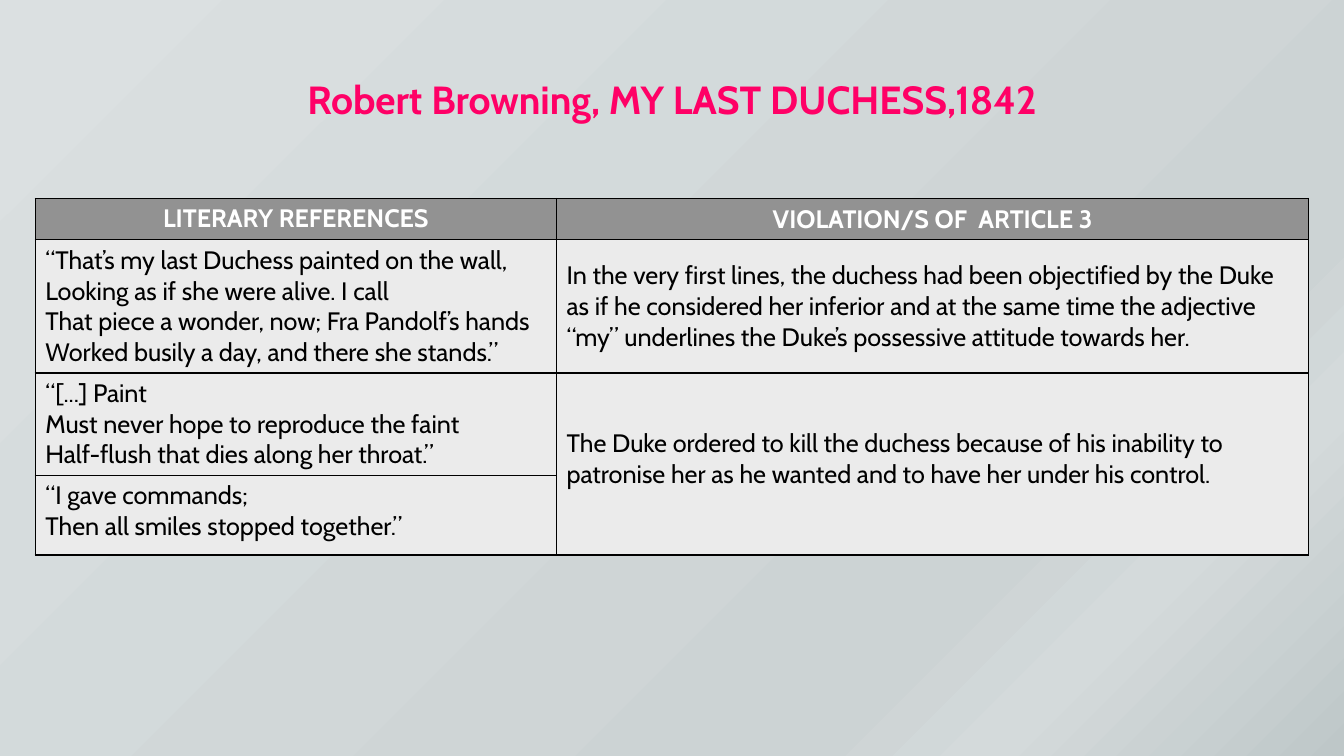
from lxml.etree import SubElement
from pptx import Presentation
from pptx.dml.color import RGBColor
from pptx.enum.text import MSO_ANCHOR, MSO_AUTO_SIZE, PP_ALIGN
from pptx.oxml import parse_xml
from pptx.oxml.ns import nsdecls, qn
from pptx.util import Inches, Pt

FONT = "Cabin"
INK, WHITE, PINK = "000000", "FFFFFF", "FF0066"
HEAD, BODY = "929292", "EBEBEB"
STOPS = [(0, "DBE0E1"), (74, "CCD3D4"), (83, "D4DADB"), (100, "BEC7C8")]
LEFT, WIDTH = 0.35, 12.63
COLS = [5.17, 7.46]
ROWS = [0.41, 1.32, 1.01, 0.79]
CELLS = [
    ["LITERARY REFERENCES", "VIOLATION/S OF  ARTICLE 3"],
    ["“That’s my last Duchess painted on the wall,\n"
     "Looking as if she were alive. I call\n"
     "That piece a wonder, now; Fra Pandolf’s hands\n"
     "Worked busily a day, and there she stands.”",
     "In the very first lines, the duchess had been objectified by the Duke "
     "as if he considered her inferior and at the same time the adjective "
     "“my” underlines the Duke’s possessive attitude towards her."],
    ["“[...] Paint\n"
     "Must never hope to reproduce the faint\n"
     "Half-flush that dies along her throat.”",
     "The Duke ordered to kill the duchess because of his inability to "
     "patronise her as he wanted and to have her under his control."],
    ["“I gave commands;\nThen all smiles stopped together.”", ""],
]


def color(code):
    return RGBColor.from_string(code)


def write(frame, text, size, ink, bold=False, align=PP_ALIGN.LEFT):
    frame.text = text
    for para in frame.paragraphs:
        para.alignment = align
        for run in para.runs:
            font = run.font
            font.name, font.size, font.bold = FONT, Pt(size), bold
            font.color.rgb = color(ink)


def paint_back(slide):
    fill = slide.background.fill
    fill.gradient()
    fill.gradient_angle = 315
    stops = next(slide.element.iter(qn("a:gsLst")))
    for stop in list(stops):
        stops.remove(stop)
    for place, code in STOPS:
        stop = SubElement(stops, qn("a:gs"), pos=str(place * 1000))
        SubElement(stop, qn("a:srgbClr"), val=code)


def add_title(slide, text):
    title = slide.shapes.title
    title.left, title.top = Inches(LEFT), Inches(0.7)
    title.width, title.height = Inches(WIDTH), Inches(0.57)
    frame = title.text_frame
    write(frame, text, 28, PINK, True, PP_ALIGN.CENTER)
    frame.word_wrap = True
    frame.auto_size = MSO_AUTO_SIZE.NONE
    frame.vertical_anchor = MSO_ANCHOR.TOP


def edge(cell):
    """Draw a thin black line on all four sides of a cell."""
    props = cell._tc.get_or_add_tcPr()
    for place, side in enumerate("LRTB"):
        line = parse_xml(
            f'<a:ln{side} {nsdecls("a")} w="{Pt(1)}"><a:solidFill>'
            f'<a:srgbClr val="{INK}"/></a:solidFill></a:ln{side}>')
        props.insert(place, line)


def add_grid(slide):
    frame = slide.shapes.add_table(
        len(ROWS), len(COLS), Inches(LEFT), Inches(1.97),
        Inches(WIDTH), Inches(sum(ROWS)))
    table = frame.table
    for col, width in zip(table.columns, COLS):
        col.width = Inches(width)
    for row, height in zip(table.rows, ROWS):
        row.height = Inches(height)
    for r, texts in enumerate(CELLS):
        for c, text in enumerate(texts):
            cell = table.cell(r, c)
            cell.fill.solid()
            cell.fill.fore_color.rgb = color(BODY if r else HEAD)
            edge(cell)
            if r == 0:
                write(cell.text_frame, text, 18, WHITE, True, PP_ALIGN.CENTER)
            elif text:
                write(cell.text_frame, text, 18, INK)
            cell.vertical_anchor = MSO_ANCHOR.MIDDLE if c else MSO_ANCHOR.TOP
    order = table.cell(2, 1)
    order.merge(table.cell(3, 1))
    order.margin_bottom = Inches(0.15)


def main():
    deck = Presentation()
    deck.slide_width, deck.slide_height = Inches(13.33), Inches(7.5)
    slide = deck.slides.add_slide(deck.slide_layouts[5])
    paint_back(slide)
    add_title(slide, "Robert Browning, MY LAST DUCHESS,1842")
    add_grid(slide)
    deck.save("out.pptx")


if __name__ == "__main__":
    main()
